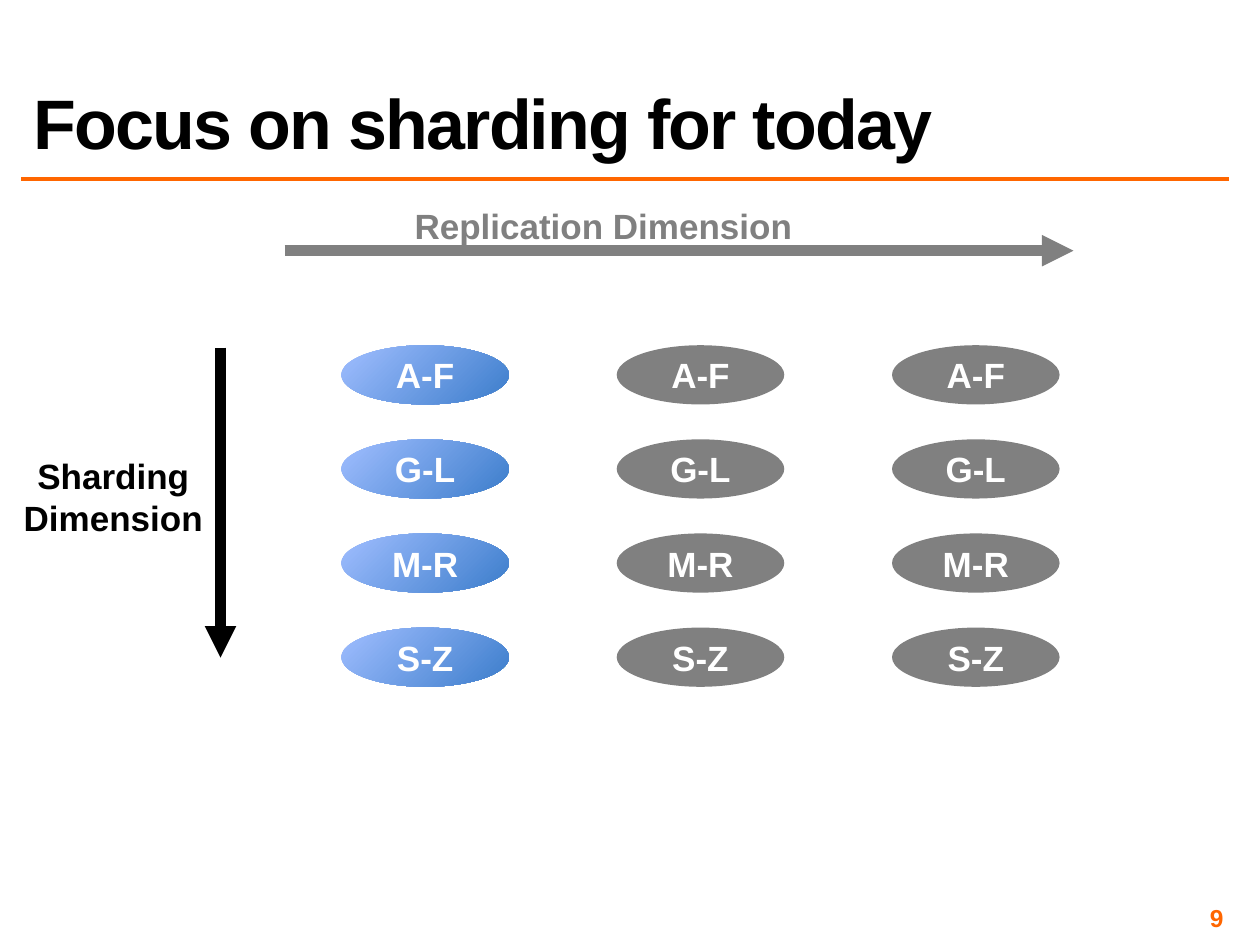
from dataclasses import dataclass

import pptx
import pptx.dml.color
import pptx.enum.dml
import pptx.enum.shapes
import pptx.enum.text
import pptx.oxml.ns
import pptx.util
from lxml import etree

Align = pptx.enum.text.PP_ALIGN
Anchor = pptx.enum.text.MSO_ANCHOR
Inches = pptx.util.Inches


@dataclass(frozen=True)
class Theme:
    font: str = "Arial"
    black: str = "000000"
    white: str = "FFFFFF"
    grey: str = "808080"
    orange: str = "FF6600"
    blue_light: str = "A0BEFF"
    blue_dark: str = "3C7DCB"
    title_size: int = 40
    label_size: int = 20
    number_size: int = 14


@dataclass(frozen=True)
class Label:
    text: str
    left: float
    top: float
    width: float
    height: float
    color: str
    size: int
    align: Align = Align.CENTER
    anchor: Anchor = Anchor.TOP
    wrap: bool = False
    inset: tuple[float, float] = (0.1, 0.05)
    line_spacing: float = 1.0
    tracking: int = 0  # hundredths of a point


@dataclass(frozen=True)
class Line:
    start: tuple[float, float]
    end: tuple[float, float]
    color: str
    width: float
    arrow: bool = True


@dataclass(frozen=True)
class Grid:
    left: float = 2.71
    top: float = 2.74
    column_step: float = 2.185
    row_step: float = 0.747
    width: float = 1.33
    height: float = 0.47


THEME = Theme()
GRID = Grid()
SHARDS = ("A-F", "G-L", "M-R", "S-Z")
REPLICAS = 3

LINES = (
    Line((0.17, 1.42), (9.75, 1.42), THEME.orange, 2, arrow=False),
    Line((2.26, 1.99), (8.52, 1.99), THEME.grey, 6),
    Line((1.75, 2.76), (1.75, 5.22), THEME.black, 6),
)
LABELS = (
    Label("Focus on sharding for today", 0.17, 0.17, 9.58, 1.17, THEME.black,
          THEME.title_size, Align.LEFT, Anchor.BOTTOM, wrap=True,
          line_spacing=0.8, tracking=-100),
    Label("Replication Dimension", 3.18, 1.57, 3.22, 0.44, THEME.grey,
          THEME.label_size),
    Label("Sharding\nDimension", 0.08, 3.56, 1.64, 0.77, THEME.black,
          THEME.label_size),
    Label("9", 7.42, 7.17, 2.33, 0.23, THEME.orange, THEME.number_size,
          Align.RIGHT, Anchor.MIDDLE, wrap=True, inset=(0.04, 0.04)),
)


def rgb(color: str) -> pptx.dml.color.RGBColor:
    return pptx.dml.color.RGBColor.from_string(color)


def write(frame, text: str, color: str, size: int, align: Align):
    """Fill the first paragraph of a text frame and return it."""
    para = frame.paragraphs[0]
    para.text = text
    para.alignment = align
    para.font.name = THEME.font
    para.font.size = pptx.util.Pt(size)
    para.font.bold = True
    para.font.color.rgb = rgb(color)
    return para


def draw_label(page, label: Label) -> None:
    box = page.shapes.add_textbox(
        *map(Inches, (label.left, label.top, label.width, label.height)))
    frame = box.text_frame
    frame.word_wrap = label.wrap
    frame.vertical_anchor = label.anchor
    frame.margin_left = frame.margin_right = Inches(label.inset[0])
    frame.margin_top = frame.margin_bottom = Inches(label.inset[1])
    para = write(frame, label.text, label.color, label.size, label.align)
    para.line_spacing = label.line_spacing
    if label.tracking:
        for span in para.runs:
            span.font._element.set("spc", str(label.tracking))


def draw_line(page, line: Line) -> None:
    connector = page.shapes.add_connector(
        pptx.enum.shapes.MSO_CONNECTOR.STRAIGHT,
        *map(Inches, line.start + line.end))
    connector.line.color.rgb = rgb(line.color)
    connector.line.width = pptx.util.Pt(line.width)
    if line.arrow:
        etree.SubElement(connector.line._get_or_add_ln(),
                         pptx.oxml.ns.qn("a:tailEnd"), type="triangle")
    etree.SubElement(connector._element.spPr, pptx.oxml.ns.qn("a:effectLst"))


def draw_shard(group, text: str, column: int, row: int) -> None:
    oval = group.shapes.add_shape(
        pptx.enum.shapes.MSO_SHAPE.OVAL,
        Inches(GRID.left + column * GRID.column_step),
        Inches(GRID.top + row * GRID.row_step),
        Inches(GRID.width), Inches(GRID.height))
    oval.shadow.inherit = False
    oval.line.fill.background()
    if column == 0:
        oval.fill.gradient()
        oval.fill.gradient_angle = 315
        stops = oval.fill.gradient_stops
        for stop, color in zip(stops, (THEME.blue_light, THEME.blue_dark)):
            stop.color.rgb = rgb(color)
    else:
        oval.fill.solid()
        oval.fill.fore_color.rgb = rgb(THEME.grey)
    oval.text_frame.vertical_anchor = Anchor.MIDDLE
    write(oval.text_frame, text, THEME.white, THEME.label_size, Align.CENTER)


def main() -> None:
    deck = pptx.Presentation()
    deck.slide_width, deck.slide_height = Inches(10), Inches(7.5)
    page = deck.slides.add_slide(deck.slide_layouts[6])

    # One group of shards for each replica
    for column in range(REPLICAS):
        group = page.shapes.add_group_shape()
        for row, shard in enumerate(SHARDS):
            draw_shard(group, shard, column, row)

    # Title rule and dimension arrows
    for line in LINES:
        draw_line(page, line)

    # Title, dimension names and page number
    for label in LABELS:
        draw_label(page, label)

    deck.save("out.pptx")


if __name__ == "__main__":
    main()
